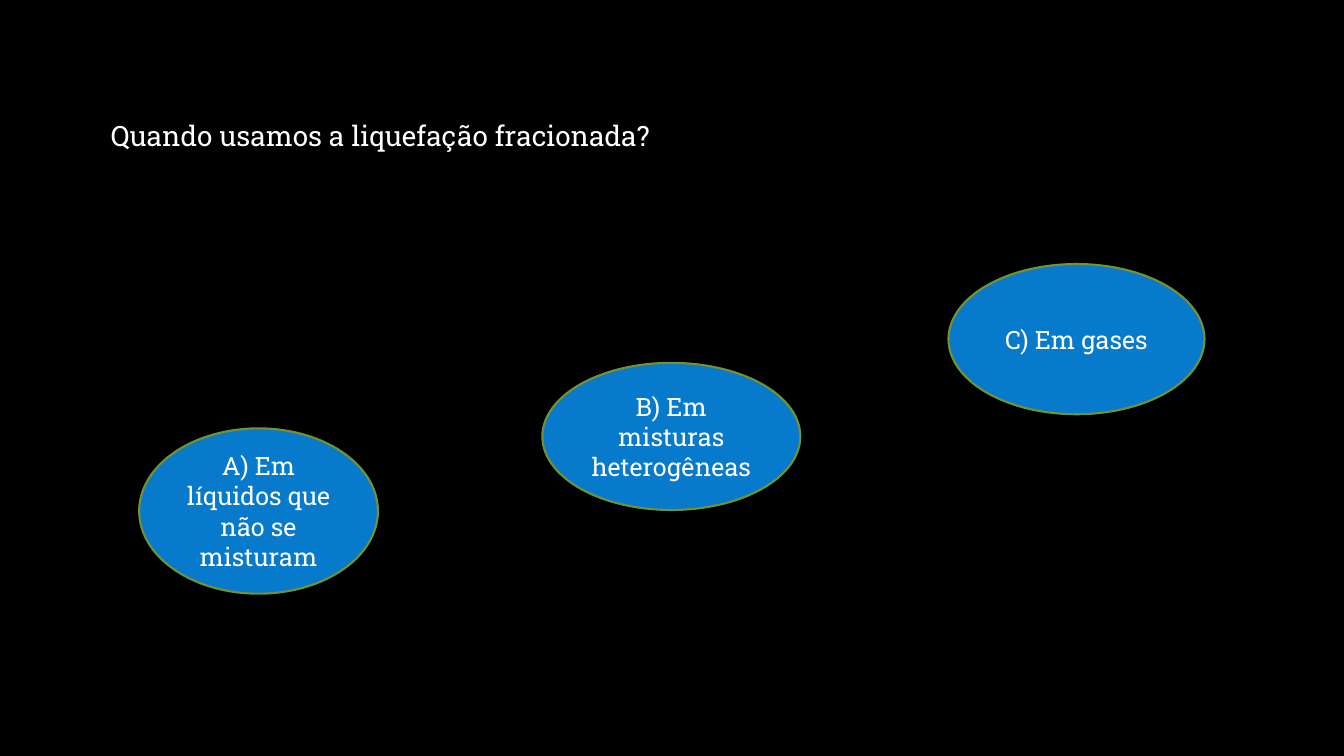
from dataclasses import dataclass

from lxml.etree import SubElement
from pptx import Presentation
from pptx.dml.color import RGBColor
from pptx.enum.shapes import MSO_SHAPE as Preset
from pptx.enum.text import MSO_ANCHOR as Anchor, MSO_AUTO_SIZE as AutoSize, PP_ALIGN as Align
from pptx.oxml.ns import qn
from pptx.util import Pt


@dataclass(frozen=True)
class Theme:
    font: str = "Roboto Slab"
    background: RGBColor = RGBColor(0x00, 0x00, 0x00)
    text: RGBColor = RGBColor(0xFF, 0xFF, 0xFF)
    answer_fill: RGBColor = RGBColor(0x07, 0x7A, 0xCC)
    answer_line: RGBColor = RGBColor(0x75, 0x92, 0x32)
    question_size: int = 20
    answer_size: int = 18
    line_width: float = 1.5


THEME = Theme()

# Boxes are left, top, width, height in points
QUESTION = ("Quando usamos a liquefação fracionada?", (72, 76.3, 815, 380.2))
ANSWERS = [
    ("A) Em líquidos que não se misturam", (99.4, 306, 170.6, 118.1)),
    ("B) Em misturas heterogêneas", (387.4, 259.2, 184.3, 105.1)),
    ("C) Em gases", (677.5, 188.6, 182.9, 107.3)),
]


def add_span(para, text, size):
    span = para.add_run()
    span.text = text
    span.font.name = THEME.font
    span.font.size = Pt(size)
    span.font.color.rgb = THEME.text


def place_question(page, text, box):
    body = page.placeholders[1]
    body.left, body.top, body.width, body.height = map(Pt, box)
    frame = body.text_frame
    frame.auto_size = AutoSize.NONE
    frame.vertical_anchor = Anchor.TOP
    para = frame.paragraphs[0]
    para.alignment = Align.LEFT
    para.line_spacing = 1.2
    para.space_before = Pt(10)
    # Plain paragraph: no bullet, no hanging indent
    properties = para._p.get_or_add_pPr()
    properties.set("marL", "0")
    properties.set("indent", "0")
    SubElement(properties, qn("a:buNone"))
    add_span(para, text, THEME.question_size)


def add_answer(page, text, box):
    oval = page.shapes.add_shape(Preset.OVAL, *map(Pt, box))
    oval.shadow.inherit = False
    oval.fill.solid()
    oval.fill.fore_color.rgb = THEME.answer_fill
    oval.line.color.rgb = THEME.answer_line
    oval.line.width = Pt(THEME.line_width)
    frame = oval.text_frame
    frame.word_wrap = True
    frame.vertical_anchor = Anchor.MIDDLE
    para = frame.paragraphs[0]
    para.alignment = Align.CENTER
    add_span(para, text, THEME.answer_size)


def build_quiz_page(deck):
    page = deck.slides.add_slide(deck.slide_layouts[1])
    page.background.fill.solid()
    page.background.fill.fore_color.rgb = THEME.background
    # The question stands in the body, so the title is not needed
    title = page.shapes.title.element
    title.getparent().remove(title)
    place_question(page, *QUESTION)
    for text, box in ANSWERS:
        add_answer(page, text, box)


def main():
    deck = Presentation()
    deck.slide_width, deck.slide_height = Pt(960), Pt(540)
    build_quiz_page(deck)
    deck.save("out.pptx")


if __name__ == "__main__":
    main()
